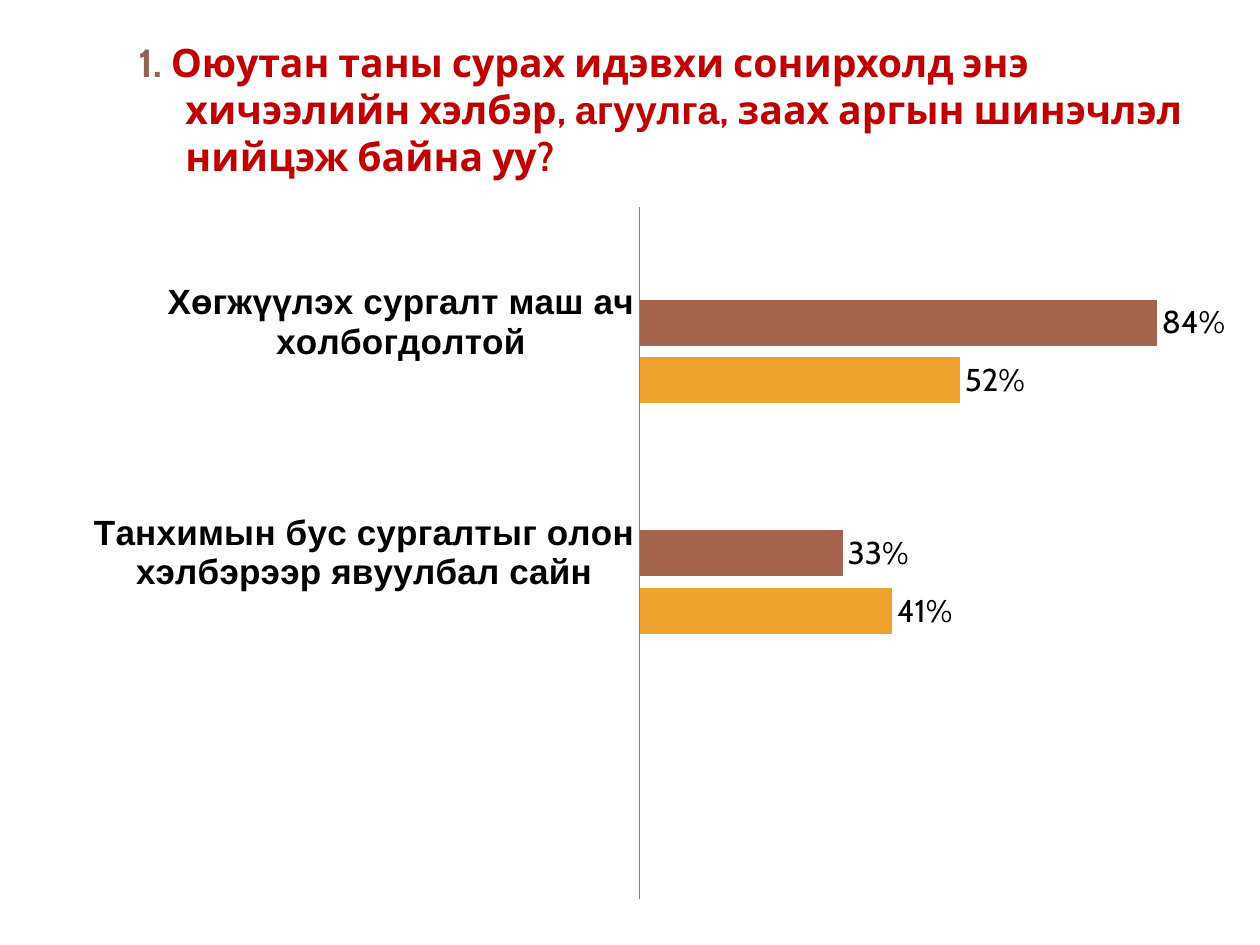
"""Build a survey slide with a question and a clustered bar chart."""
from lxml.etree import SubElement
from pptx import Presentation
from pptx.chart.data import CategoryChartData
from pptx.dml.color import RGBColor
from pptx.enum.chart import XL_CHART_TYPE, XL_LABEL_POSITION, XL_TICK_LABEL_POSITION, XL_TICK_MARK
from pptx.oxml import parse_xml
from pptx.oxml.ns import nsdecls, qn
from pptx.util import Cm, Pt

BLACK = RGBColor(0x00, 0x00, 0x00)
GRAY = RGBColor(0x86, 0x86, 0x86)
RED = RGBColor(0xC0, 0x00, 0x00)
TAUPE = RGBColor(0x92, 0x62, 0x55)
GOLD = RGBColor(0xF0, 0xA2, 0x2E)
BROWN = RGBColor(0xA5, 0x64, 0x4E)
ROSE = RGBColor(0xB5, 0x8B, 0x80)

TITLE = [
    ("1. ", "Cabin", TAUPE),
    ("Оюутан таны сурах идэвхи сонирхолд энэ хичээлийн хэлбэр, ", "Cabin", RED),
    ("агуулга", "Arial", RED),
    (", заах аргын шинэчлэл нийцэж байна уу?", "Cabin", RED),
]
CATS = [
    "",
    "Танхимын бус сургалтыг олон хэлбэрээр явуулбал сайн",
    "Хөгжүүлэх сургалт маш ач холбогдолтой",
]
SERIES = [
    ("Series 1", (None, 0.41, 0.52), GOLD),
    ("Series 2", (None, 0.33, 0.84), BROWN),
    ("Series 3", (None, None, None), ROSE),
]
PLOT = {"x": 0.49, "y": 0.02, "w": 0.48, "h": 0.96}


def add_title(slide):
    box = slide.shapes.add_textbox(Cm(2.54), Cm(0.64), Cm(22.86), Cm(2.13))
    box.text_frame.word_wrap = True
    para = box.text_frame.paragraphs[0]
    para.font.size, para.font.bold = Pt(22.4), True
    props = para._p.get_or_add_pPr()
    props.set("marL", str(Cm(0.95)))
    props.set("indent", str(-Cm(0.95)))
    for text, font, color in TITLE:
        run = para.add_run()
        run.text = text
        run.font.name = font
        run.font.color.rgb = color


def place_plot(chart):
    area = chart._chartSpace.chart.plotArea
    for old in area.findall(qn("c:layout")):
        area.remove(old)
    layout = parse_xml(f"<c:layout {nsdecls('c')}><c:manualLayout/></c:layout>")
    marks = {"layoutTarget": "inner", "xMode": "edge", "yMode": "edge", **PLOT}
    for tag, value in marks.items():
        SubElement(layout[0], qn(f"c:{tag}")).set("val", str(value))
    area.insert(0, layout)


def style_axes(chart):
    cat, val = chart.category_axis, chart.value_axis
    cat.major_tick_mark = cat.minor_tick_mark = XL_TICK_MARK.NONE
    cat.tick_label_position = XL_TICK_LABEL_POSITION.NEXT_TO_AXIS
    cat.format.line.color.rgb = GRAY
    cat.format.line.width = Pt(0.75)
    font = cat.tick_labels.font
    font.name, font.size, font.bold = "Arial", Pt(20), True
    val.visible = val.has_major_gridlines = False
    val.minimum_scale, val.maximum_scale = 0, 0.9


def style_bars(plot):
    plot.gap_width, plot.overlap = 150, -25
    plot.vary_by_categories = False
    for bars, (_, _, color) in zip(plot.series, SERIES):
        bars.format.fill.solid()
        bars.format.fill.fore_color.rgb = color
        labels = bars.data_labels
        labels.show_value = True
        labels.number_format, labels.number_format_is_linked = "0%", False
        labels.position = XL_LABEL_POSITION.OUTSIDE_END


def add_bars(slide):
    data = CategoryChartData(number_format="0%")
    data.categories = CATS
    for name, values, _ in SERIES:
        data.add_series(name, values)
    frame = slide.shapes.add_chart(
        XL_CHART_TYPE.BAR_CLUSTERED, Cm(1.48), Cm(3.89), Cm(23.29), Cm(14.53), data)
    chart = frame.chart
    chart.has_legend = chart.has_title = False
    chart.font.name, chart.font.size = "Cabin", Pt(18)
    chart.font.color.rgb = BLACK
    style_axes(chart)
    style_bars(chart.plots[0])
    place_plot(chart)


def main():
    deck = Presentation()
    deck.slide_width, deck.slide_height = Cm(25.4), Cm(19.05)
    slide = deck.slides.add_slide(deck.slide_layouts[6])
    add_bars(slide)
    add_title(slide)
    deck.save("out.pptx")


if __name__ == "__main__":
    main()
